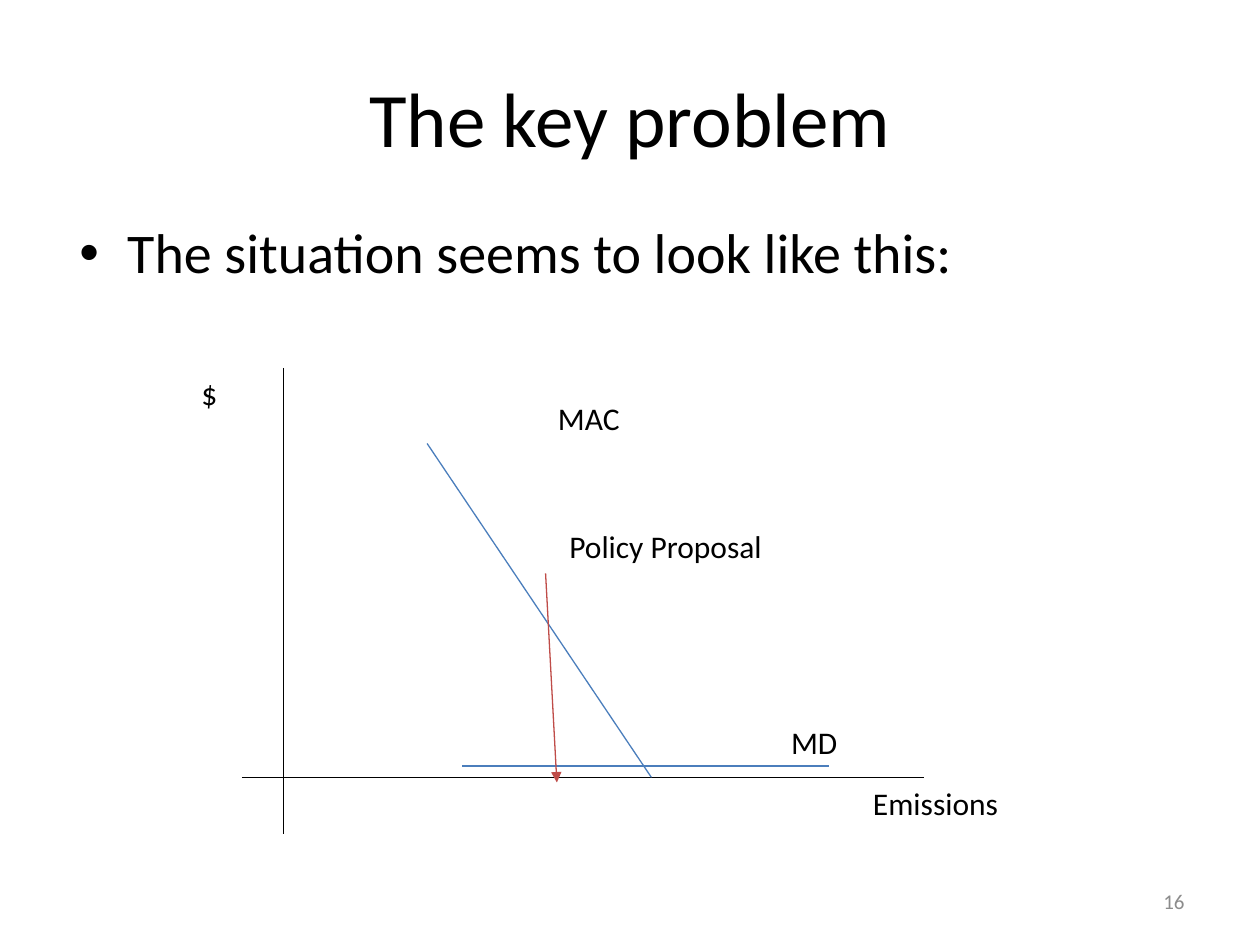
from lxml import etree
from pptx import Presentation
from pptx import util as u
from pptx.dml.color import RGBColor
from pptx.enum import shapes, text
from pptx.oxml.ns import qn

BLACK = RGBColor(0x00, 0x00, 0x00)
GREY = RGBColor(0x8C, 0x8C, 0x8C)
BLUE = RGBColor(0x4B, 0x7E, 0xBC)
RED = RGBColor(0xBF, 0x4C, 0x48)
FONT = "Calibri"
WIDTH, HEIGHT = 10, 7.5

# Diagram axes, in inches
AXIS_X, AXIS_Y = 2.25, 6.17


def write(shape, words, size, color=BLACK, align=text.PP_ALIGN.LEFT,
          anchor=text.MSO_ANCHOR.TOP):
    frame = shape.text_frame
    frame.text = words
    frame.word_wrap = True
    frame.vertical_anchor = anchor
    para = frame.paragraphs[0]
    para.alignment = align
    font = para.runs[0].font
    font.name, font.size, font.color.rgb = FONT, u.Pt(size), color
    return para


def place(shape, left, top, width, height):
    shape.left, shape.top = u.Inches(left), u.Inches(top)
    shape.width, shape.height = u.Inches(width), u.Inches(height)


def add_label(page, words, left, top, width, height=0.4, size=18, **style):
    box = page.shapes.add_textbox(*map(u.Inches, (left, top, width, height)))
    write(box, words, size, **style)


def add_line(page, start, end, color=BLACK, arrow=False):
    line = page.shapes.add_connector(shapes.MSO_CONNECTOR.STRAIGHT,
                                     *map(u.Inches, (*start, *end)))
    line.line.color.rgb = color
    line.line.width = u.Pt(0.75)
    if arrow:
        etree.SubElement(line.line._get_or_add_ln(), qn("a:tailEnd"), type="triangle")
    etree.SubElement(line._element.spPr, qn("a:effectLst"))


def add_bullet(para, indent):
    props = para._p.get_or_add_pPr()
    props.set("marL", str(u.Inches(indent)))
    props.set("indent", str(-u.Inches(indent)))
    etree.SubElement(props, qn("a:buFont"), typeface="Arial")
    etree.SubElement(props, qn("a:buChar"), char="•")


def main():
    deck = Presentation()
    deck.slide_width, deck.slide_height = u.Inches(WIDTH), u.Inches(HEIGHT)
    page = deck.slides.add_slide(deck.slide_layouts[1])

    # Title and bullet
    title, body = page.placeholders
    place(title, 0.5, 0.3, 0.9 * WIDTH, 1.25)
    write(title, "The key problem", 44, align=text.PP_ALIGN.CENTER,
          anchor=text.MSO_ANCHOR.MIDDLE)
    place(body, 0.53, 1.68, 0.9 * WIDTH, 0.66 * HEIGHT)
    add_bullet(write(body, "The situation seems to look like this:", 32), 0.38)

    # Axes
    add_line(page, (AXIS_X, 2.92), (AXIS_X, 6.62))
    add_line(page, (1.92, AXIS_Y), (7.33, AXIS_Y))

    # Abatement cost, damage and policy lines
    add_line(page, (5.17, AXIS_Y), (3.39, 3.52), BLUE)
    add_line(page, (3.67, 6.08), (6.58, 6.08), BLUE)
    add_line(page, (4.33, 4.55), (4.42, 6.21), RED, arrow=True)

    # Labels
    for words, left, top, width in (("Emissions", 6.83, AXIS_Y, 1.42),
                                    ("MAC", 4.33, 3.12, 1.58),
                                    ("MD", 6.18, 5.69, 0.75),
                                    ("$", 1.5, 2.92, 0.5),
                                    ("Policy Proposal", 4.42, 4.13, 2.17)):
        add_label(page, words, left, top, width)

    # Page number
    add_label(page, "16", 7.17, 6.95, 2.33, size=12, color=GREY,
              align=text.PP_ALIGN.RIGHT, anchor=text.MSO_ANCHOR.MIDDLE)

    deck.save("out.pptx")


if __name__ == "__main__":
    main()
